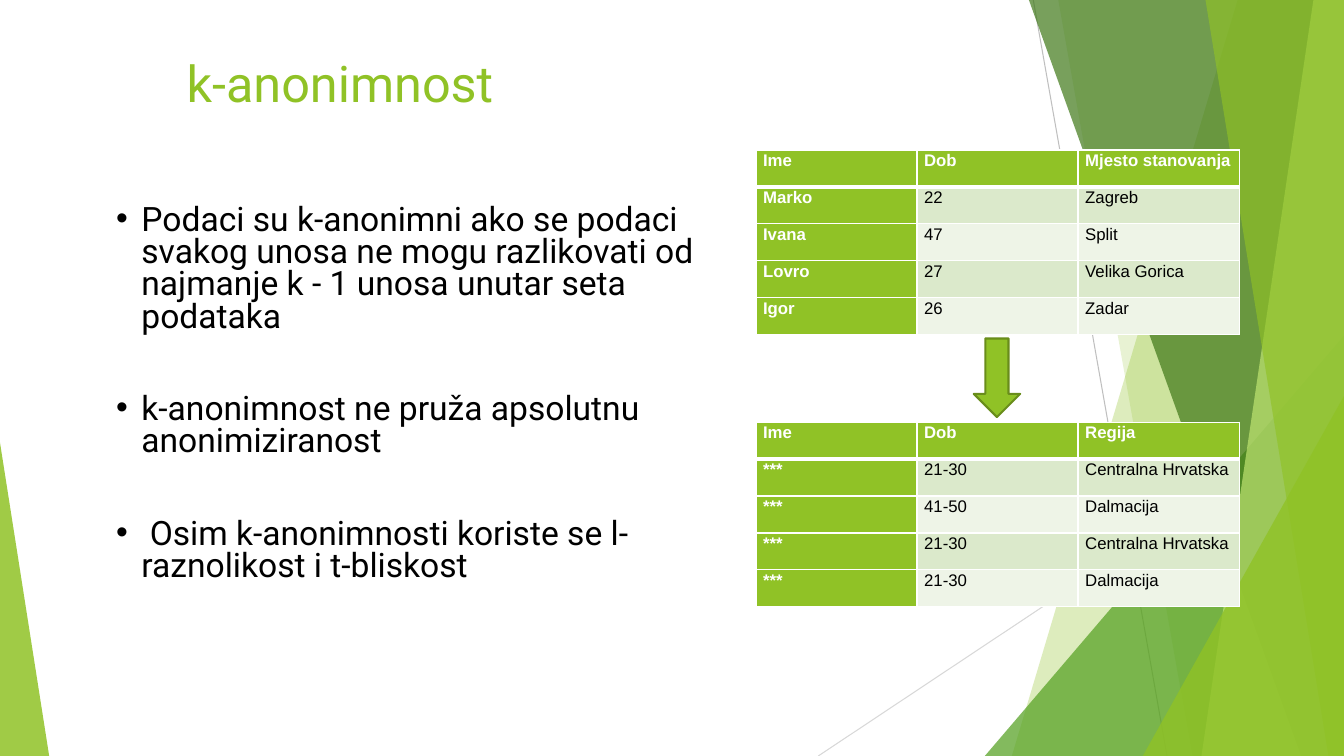
from dataclasses import dataclass

from pptx import Presentation
from pptx import util as u
from pptx.dml.color import RGBColor
from pptx.enum import shapes, text
from pptx.oxml import parse_xml
from pptx.oxml.ns import nsdecls, qn


@dataclass(frozen=True)
class Theme:
    green: str = "90C226"
    leaf: str = "54A021"
    forest: str = "3F7818"
    lime: str = "BFE471"
    outline: str = "698D1B"
    bands: tuple = ("EEF4E7", "DBE9CB")
    white: str = "FFFFFF"
    black: str = "000000"
    grays: tuple = ("BFBFBF", "D8D8D8")
    text_font: str = "Roboto"
    table_font: str = "Arial"
    title_size: int = 36
    body_size: int = 24
    table_size: int = 12


WIDTH, HEIGHT = 33.87, 19.05
COLUMN, ROW = 4.06, 0.93
TABLE_LEFT = 19.05

BULLETS = [
    "Podaci su k-anonimni ako se podaci svakog unosa ne mogu razlikovati "
    "od najmanje k - 1 unosa unutar seta podataka",
    "k-anonimnost ne pruža apsolutnu anonimiziranost",
    " Osim k-anonimnosti koriste se l-raznolikost i t-bliskost",
]
ORIGINAL_DATA = [
    ("Ime", "Dob", "Mjesto stanovanja"),
    ("Marko", "22", "Zagreb"),
    ("Ivana", "47", "Split"),
    ("Lovro", "27", "Velika Gorica"),
    ("Igor", "26", "Zadar"),
]
ANONYMOUS_DATA = [
    ("Ime", "Dob", "Regija"),
    ("***", "21-30", "Centralna Hrvatska"),
    ("***", "41-50", "Dalmacija"),
    ("***", "21-30", "Centralna Hrvatska"),
    ("***", "21-30", "Dalmacija"),
]


def cm(*lengths):
    return [u.Cm(length) for length in lengths]


def write(para, words, *, font, size, color, bold=False,
          align=text.PP_ALIGN.LEFT, spacing=1.0, before=0):
    para.alignment = align
    para.line_spacing = spacing
    para.space_before = u.Pt(before)
    span = para.add_run()
    span.text = words
    span.font.name = font
    span.font.size = u.Pt(size)
    span.font.bold = bold
    span.font.color.rgb = RGBColor.from_string(color)


def add_bullet(para, color):
    props = para._p.get_or_add_pPr()
    props.set("marL", str(u.Cm(0.64)))
    props.set("indent", str(-u.Cm(0.64)))
    props.append(parse_xml(f'<a:buClr {nsdecls("a")}><a:srgbClr val="{color}"/></a:buClr>'))
    props.append(parse_xml(f'<a:buFont {nsdecls("a")} typeface="Arial"/>'))
    props.append(parse_xml(f'<a:buChar {nsdecls("a")} char="•"/>'))


def add_border(cell, side, color, points):
    cell._tc.get_or_add_tcPr().append(parse_xml(
        f'<a:ln{side} {nsdecls("a")} w="{u.Pt(points)}"><a:solidFill>'
        f'<a:srgbClr val="{color}"/></a:solidFill></a:ln{side}>'))


class SlideBuilder:
    def __init__(self, page, theme):
        self.page = page
        self.theme = theme

    def line(self, start, end, color):
        line = self.page.shapes.add_connector(
            shapes.MSO_CONNECTOR.STRAIGHT, *cm(*start, *end))
        line.line.color.rgb = RGBColor.from_string(color)
        line.line.width = u.Pt(0.75)
        line._element.spPr.append(parse_xml(f'<a:effectLst {nsdecls("a")}/>'))

    def paint(self, shape, color, opacity=100, outline=None):
        shape.shadow.inherit = False
        shape.fill.solid()
        shape.fill.fore_color.rgb = RGBColor.from_string(color)
        if opacity < 100:
            tint = shape._element.spPr.find(qn("a:solidFill"))[0]
            tint.append(parse_xml(f'<a:alpha {nsdecls("a")} val="{opacity * 1000}"/>'))
        if outline:
            shape.line.color.rgb = RGBColor.from_string(outline)
            shape.line.width = u.Pt(1.5)
        else:
            shape.line.fill.background()

    def band(self, top_x, bottom_x, color, opacity):
        """Full-height band from a slanted left edge to the slide's right edge."""
        outline = self.page.shapes.build_freeform(*cm(top_x, 0))
        outline.add_line_segments(
            [cm(WIDTH, 0), cm(WIDTH, HEIGHT), cm(bottom_x, HEIGHT)], close=True)
        self.paint(outline.convert_to_shape(), color, opacity)

    def triangle(self, left, top, width, apex, color, opacity):
        """Triangle standing on the slide's bottom edge."""
        shape = self.page.shapes.add_shape(
            shapes.MSO_SHAPE.ISOSCELES_TRIANGLE, *cm(left, top, width, HEIGHT - top))
        shape.adjustments[0] = apex
        self.paint(shape, color, opacity)

    def down_arrow(self, left, top, width, height):
        shape = self.page.shapes.add_shape(
            shapes.MSO_SHAPE.DOWN_ARROW, *cm(left, top, width, height))
        self.paint(shape, self.theme.green, outline=self.theme.outline)

    def place(self, box, left, top, width, height):
        """Move a placeholder to its place, in front of what is already drawn."""
        box.left, box.top, box.width, box.height = cm(left, top, width, height)
        box._element.getparent().append(box._element)
        frame = box.text_frame
        frame.word_wrap = True
        frame.auto_size = text.MSO_AUTO_SIZE.NONE
        frame.vertical_anchor = text.MSO_ANCHOR.TOP
        return frame

    def title(self, words):
        frame = self.place(self.page.shapes.title, 4.45, 1.19, 29.21, 3.68)
        write(frame.paragraphs[0], words, font=self.theme.text_font,
              size=self.theme.title_size, color=self.theme.green)

    def bullets(self, items):
        frame = self.place(self.page.placeholders[1], 2.67, 3.48, 15.65, 12.09)
        frame.margin_top = u.Cm(1.7)
        for index, words in enumerate(items):
            para = frame.add_paragraph() if index else frame.paragraphs[0]
            write(para, words, font=self.theme.text_font, size=self.theme.body_size,
                  color=self.theme.black, spacing=0.8, before=43 if index else 0)
            add_bullet(para, self.theme.black)

    def table(self, top, rows):
        theme = self.theme
        columns = len(rows[0])
        table = self.page.shapes.add_table(
            len(rows), columns,
            *cm(TABLE_LEFT, top, COLUMN * columns, ROW * len(rows))).table
        table.first_col = True
        for column in table.columns:
            column.width = u.Cm(COLUMN)
        for r, values in enumerate(rows):
            table.rows[r].height = u.Cm(ROW)
            for c, words in enumerate(values):
                cell = table.cell(r, c)
                heading = r == 0 or c == 0
                cell.margin_left = cell.margin_right = u.Cm(0.18)
                cell.margin_top = cell.margin_bottom = 0
                for side in "LRTB":
                    thick = (r, side) in ((0, "B"), (1, "T"))
                    add_border(cell, side, theme.white, 3 if thick else 1)
                cell.fill.solid()
                cell.fill.fore_color.rgb = RGBColor.from_string(
                    theme.green if heading else theme.bands[r % 2])
                write(cell.text_frame.paragraphs[0], words, font=theme.table_font,
                      size=theme.table_size, bold=heading,
                      color=theme.white if heading else theme.black,
                      align=text.PP_ALIGN.JUSTIFY, spacing=1.07)

    def backdrop(self):
        theme = self.theme
        self.line((26.04, 0), (29.41, HEIGHT), theme.grays[0])
        self.line((WIDTH, 10.24), (20.62, HEIGHT), theme.grays[1])
        self.band(31.19, 25.5, theme.green, 30)
        self.band(26.67, 30.05, theme.green, 20)
        self.triangle(24.82, 8.46, 9.05, 1, theme.leaf, 72)
        self.band(25.93, 32.79, theme.forest, 70)
        self.band(33.1, 30.28, theme.lime, 70)
        self.band(30.38, 33.48, theme.green, 65)
        self.triangle(28.8, 9.98, 5.07, 1, theme.green, 80)
        self.triangle(0, 11.15, 1.24, 0, theme.green, 85)


def main():
    deck = Presentation()
    deck.slide_width, deck.slide_height = cm(WIDTH, HEIGHT)
    builder = SlideBuilder(deck.slides.add_slide(deck.slide_layouts[1]), Theme())
    builder.backdrop()
    builder.title("k-anonimnost")
    builder.table(10.64, ANONYMOUS_DATA)
    builder.table(3.78, ORIGINAL_DATA)
    builder.down_arrow(24.54, 8.53, 1.17, 1.98)
    builder.bullets(BULLETS)
    deck.save("out.pptx")


if __name__ == "__main__":
    main()
